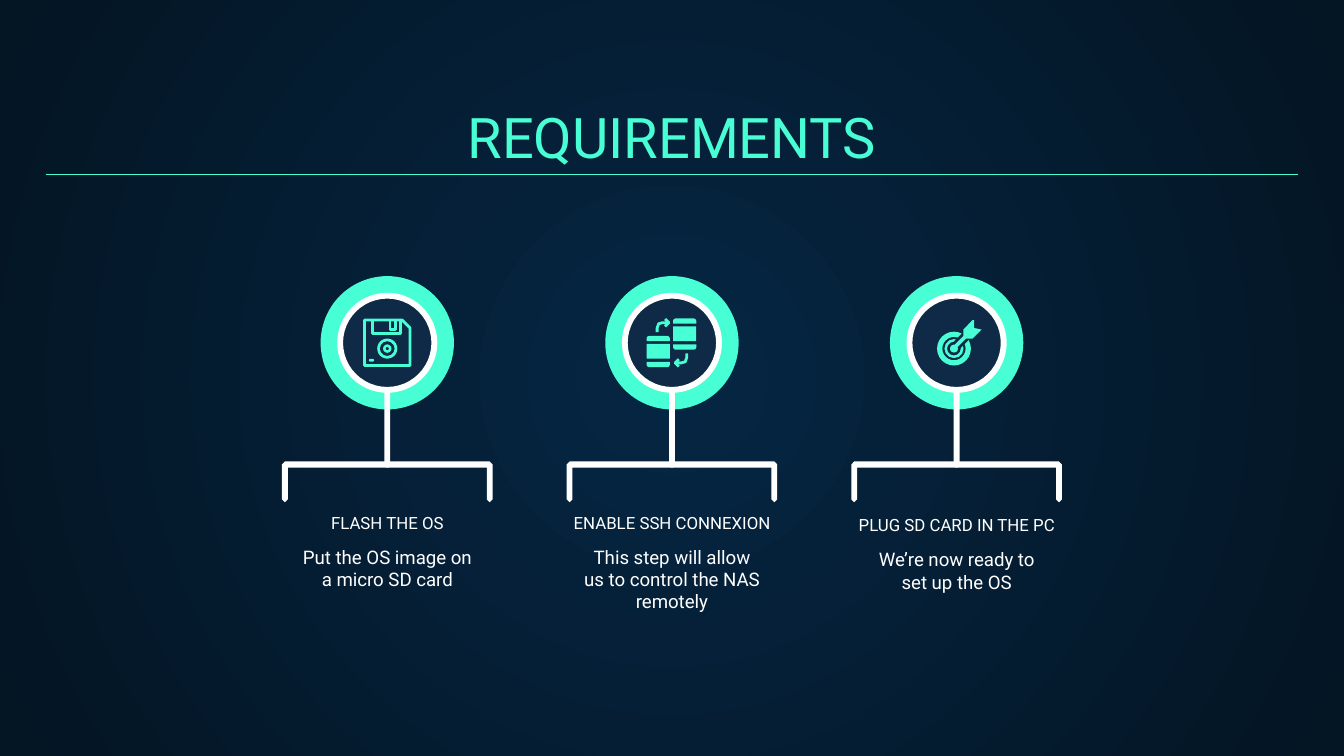
from dataclasses import dataclass
from typing import Callable

from lxml import etree
from pptx import Presentation
from pptx import util as u
from pptx.dml.color import RGBColor
from pptx.enum import shapes, text
from pptx.oxml.ns import qn

COLORS = {"teal": "48FFD5", "white": "FFFFFF", "navy": "0E2A47",
          "center": "052643", "edge": "041523"}
FONT = "Roboto"
Shape = shapes.MSO_SHAPE
Anchor = text.MSO_ANCHOR
CENTER_X, PITCH = 12.7, 5.38    # middle column and column spacing, cm
MEDAL_Y = 6.48
Points = list[tuple[float, float]]


@dataclass
class Step:
    heading: str
    body: str
    icon: Callable[[float, float], None]
    drop: float = 0


def color(name: str) -> RGBColor:
    return RGBColor.from_string(COLORS[name])


def paint(shape, name: str) -> None:
    shape.shadow.inherit = False
    shape.fill.solid()
    shape.fill.fore_color.rgb = color(name)
    shape.line.fill.background()


def add_preset(kind, x: float, y: float, width: float, height: float,
               name: str = "teal", adjust: float | None = None):
    """Draw a filled preset shape centred on x, y."""
    shape = slide.shapes.add_shape(kind, u.Cm(x - width / 2), u.Cm(y - height / 2),
                                   u.Cm(width), u.Cm(height))
    if adjust is not None:
        shape.adjustments[0] = adjust
    paint(shape, name)
    return shape


def add_ring(x: float, y: float, diameter: float, band: float, name: str = "teal") -> None:
    add_preset(Shape.DONUT, x, y, diameter, diameter, name, band / diameter)


def add_outline(x: float, y: float, points: Points, close: bool):
    """Build a freeform from offsets around x, y."""
    corners = [(u.Cm(x + dx), u.Cm(y + dy)) for dx, dy in points]
    builder = slide.shapes.build_freeform(*corners[0])
    builder.add_line_segments(corners[1:], close=close)
    return builder.convert_to_shape()


def add_polygon(x: float, y: float, points: Points, name: str) -> None:
    paint(add_outline(x, y, points, True), name)


def add_stroke(x: float, y: float, points: Points, close: bool = False,
               name: str = "teal", weight: float = 1.5) -> None:
    shape = add_outline(x, y, points, close)
    shape.shadow.inherit = False
    shape.fill.background()
    shape.line.color.rgb = color(name)
    shape.line.width = u.Pt(weight)


def add_text(x: float, top: float, width: float, height: float, content: str,
             size: float, name: str, anchor) -> None:
    """Draw a centred text box around x."""
    box = slide.shapes.add_textbox(u.Cm(x - width / 2), u.Cm(top), u.Cm(width), u.Cm(height))
    frame = box.text_frame
    frame.word_wrap = True
    frame.vertical_anchor = anchor
    frame.margin_left = frame.margin_right = u.Cm(0.25)
    frame.margin_top = frame.margin_bottom = u.Cm(0.25)
    paragraph = frame.paragraphs[0]
    paragraph.text = content
    paragraph.alignment = text.PP_ALIGN.CENTER
    paragraph.font.name = FONT
    paragraph.font.size = u.Pt(size)
    paragraph.font.color.rgb = color(name)


def draw_floppy(x: float, y: float) -> None:
    add_stroke(x, y, [(-0.43, -0.43), (0.28, -0.43), (0.43, -0.28),
                      (0.43, 0.43), (-0.43, 0.43)], close=True)
    # Shutter and its slot
    for left, right, bottom in ((-0.28, 0.25, -0.17), (0.05, 0.15, -0.25)):
        add_stroke(x, y, [(left, -0.43), (left, bottom), (right, bottom), (right, -0.43)])
    add_preset(Shape.ROUNDED_RECTANGLE, x - 0.3, y + 0.33, 0.1, 0.05, adjust=0.5)
    add_ring(x, y + 0.11, 0.38, 0.05)
    add_ring(x, y + 0.11, 0.16, 0.05)


def draw_exchange(x: float, y: float) -> None:
    # Two barrels of three bands
    for dx, top in ((-0.26, -0.13), (0.24, -0.46)):
        for kind, dy, height, angle in ((Shape.ROUND_2_SAME_RECTANGLE, 0.05, 0.1, 0),
                                        (Shape.RECTANGLE, 0.29, 0.28, 0),
                                        (Shape.ROUND_2_SAME_RECTANGLE, 0.54, 0.1, 180)):
            adjust = None if kind == Shape.RECTANGLE else 0.5
            band = add_preset(kind, x + dx, y + top + dy, 0.44, height, adjust=adjust)
            band.rotation = angle
    # Two bent arrows, mirrored through the centre
    shaft = [(-0.28, -0.2), (-0.28, -0.28), (-0.25, -0.36), (-0.18, -0.38), (-0.06, -0.38)]
    head = [(-0.13, -0.45), (-0.06, -0.38), (-0.13, -0.31)]
    for sign in (1, -1):
        for points in (shaft, head):
            add_stroke(x, y, [(sign * dx, sign * dy) for dx, dy in points])


def draw_target(x: float, y: float) -> None:
    target_x, target_y = x - 0.05, y + 0.11
    add_ring(target_x, target_y, 0.64, 0.1)
    add_ring(target_x, target_y, 0.36, 0.05)
    # Dart over a dark gap
    add_stroke(x, y, [(0, 0.05), (0.3, -0.25)], name="navy", weight=5)
    add_preset(Shape.OVAL, target_x, target_y, 0.15, 0.15)
    add_polygon(x, y, [(0.3, -0.43), (0.13, -0.25), (0.13, -0.13), (-0.08, 0.08),
                       (-0.03, 0.13), (0.18, -0.08), (0.3, -0.08), (0.47, -0.25),
                       (0.33, -0.28), (0.33, -0.43)], "teal")


def draw_step(x: float, step: Step) -> None:
    # Bracket: half the outline, then its mirror image
    half = [(-1.93, 8.72), (-1.99, 8.78), (-1.99, 9.44), (-1.94, 9.49),
            (-1.93, 9.49), (-1.88, 9.44), (-1.88, 8.84)]
    add_polygon(x, 0, half + [(-dx, dy) for dx, dy in reversed(half)], "white")
    # Medal and stem
    add_preset(Shape.OVAL, x, MEDAL_Y, 2.52, 2.52)
    add_preset(Shape.ROUNDED_RECTANGLE, x, 7.57, 0.11, 2.54, "white", 0.5)
    add_preset(Shape.OVAL, x, MEDAL_Y, 1.78, 1.78, "navy")
    add_ring(x, MEDAL_Y, 1.89, 0.11, "white")
    step.icon(x, MEDAL_Y)
    # Words
    add_text(x, 9.73 + step.drop, 5.77, 0.53, step.heading, 9, "white", Anchor.BOTTOM)
    add_text(x, 10.06 + step.drop, 3.86, 1.4, step.body, 10, "white", Anchor.TOP)


STEPS = [
    Step("FLASH THE OS", "Put the OS image on a micro SD card", draw_floppy),
    Step("ENABLE SSH CONNEXION", "This step will allow us to control the NAS remotely",
         draw_exchange),
    Step("PLUG SD CARD IN THE PC", "We’re now ready to set up the OS", draw_target, 0.05),
]

presentation = Presentation()
presentation.slide_width, presentation.slide_height = u.Cm(25.4), u.Cm(14.29)
slide = presentation.slides.add_slide(presentation.slide_layouts[6])

# Radial background
background = slide.background.fill
background.gradient()
for stop, name in zip(background.gradient_stops, ("center", "edge")):
    stop.color.rgb = color(name)
gradient = slide.element.find(".//" + qn("a:gradFill"))
for linear in gradient.findall(qn("a:lin")):
    gradient.remove(linear)
radial = etree.SubElement(gradient, qn("a:path"), {"path": "circle"})
etree.SubElement(radial, qn("a:fillToRect"), dict.fromkeys("ltrb", "50000"))

# Title and rule
add_text(CENTER_X, 1.78, 23.67, 1.68, "REQUIREMENTS", 30, "teal", Anchor.BOTTOM)
rule = slide.shapes.add_connector(shapes.MSO_CONNECTOR.STRAIGHT,
                                  u.Cm(0.86), u.Cm(3.3), u.Cm(24.54), u.Cm(3.3))
rule.line.color.rgb = color("teal")
rule.line.width = u.Pt(0.75)
etree.SubElement(rule.element.spPr, qn("a:effectLst"))

# Steps
for column, step in enumerate(STEPS, start=-1):
    draw_step(CENTER_X + column * PITCH, step)

presentation.save("out.pptx")
